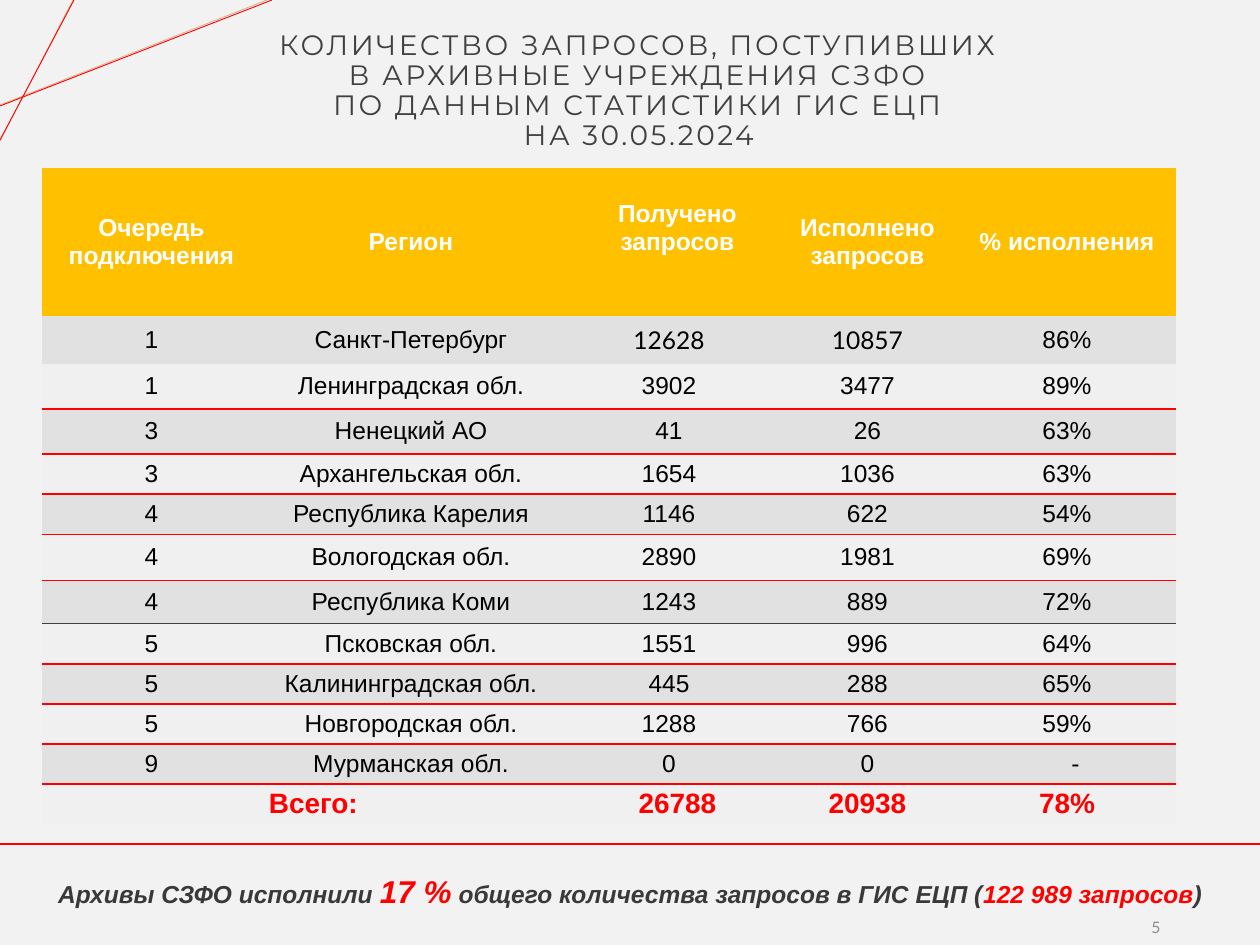
from lxml import etree
from pptx import Presentation
from pptx import util as u
from pptx.dml.color import RGBColor
from pptx.enum import shapes, text
from pptx.oxml.ns import qn

PX = 914400 / 126
RED, GRAY, LIGHT, AMBER = "FF0000", "E1E1E1", "F0F0F0", "FFC000"
CENTER, LEFT, RIGHT = text.PP_ALIGN.CENTER, text.PP_ALIGN.LEFT, text.PP_ALIGN.RIGHT
NO_STYLE = "{2D5ABB26-0587-4C30-8999-92F81FD0307C}"

COL_WIDTHS = [202, 317, 216, 181, 218]
ROW_HEIGHTS = [148, 48, 45, 45, 40, 40, 46, 44, 40, 40, 40, 40, 40]
HEADER = ["Очередь подключения", "Регион", "Получено запросов",
          "Исполнено запросов", "% исполнения"]
REGIONS = [
    ("1", "Санкт-Петербург", "12628", "10857", "86%"),
    ("1", "Ленинградская обл.", "3902", "3477", "89%"),
    ("3", "Ненецкий АО", "41", "26", "63%"),
    ("3", "Архангельская обл.", "1654", "1036", "63%"),
    ("4", "Республика Карелия", "1146", "622", "54%"),
    ("4", "Вологодская обл.", "2890", "1981", "69%"),
    ("4", "Республика Коми", "1243", "889", "72%"),
    ("5", "Псковская обл.", "1551", "996", "64%"),
    ("5", "Калининградская обл.", "445", "288", "65%"),
    ("5", "Новгородская обл.", "1288", "766", "59%"),
    ("9", "Мурманская обл.", "0", "0", "-"),
]
TOTAL = ["", "Всего:", "26788", "20938", "78%"]
# Rules under table rows: row number -> colour, width in points
RULES = {row: (RED, 1) for row in (2, 3, 4, 8, 10, 11)}
RULES.update({5: (RED, 0.5), 7: ("404040", 0.5)})


def px(n):
    return u.Emu(round(n * PX))


def rgb(value):
    return RGBColor.from_string(value)


def set_font(font, size, color, name="Arial", bold=False, italic=False):
    font.size, font.name = u.Pt(size), name
    font.bold, font.italic = bold, italic
    font.color.rgb = rgb(color)


def add_line(s, x1, y1, x2, y2, color, width):
    line = s.shapes.add_connector(shapes.MSO_CONNECTOR.STRAIGHT,
                                  px(x1), px(y1), px(x2), px(y2))
    line.line.color.rgb = rgb(color)
    line.line.width = u.Pt(width)
    etree.SubElement(line._element.spPr, qn("a:effectLst"))


def add_text(s, x, y, w, h, align=CENTER, anchor=text.MSO_ANCHOR.MIDDLE):
    """Add a wrapping text box and return its first paragraph."""
    tf = s.shapes.add_textbox(px(x), px(y), px(w), px(h)).text_frame
    tf.word_wrap = True
    tf.vertical_anchor = anchor
    p = tf.paragraphs[0]
    p.alignment = align
    return p


def set_border(cell, side, color, width):
    tc_pr = cell._tc.get_or_add_tcPr()
    ln = etree.Element(qn(f"a:ln{side}"), w=str(u.Pt(width)))
    fill = etree.SubElement(ln, qn("a:solidFill"))
    etree.SubElement(fill, qn("a:srgbClr"), val=color)
    tc_pr.insert(0, ln)


def fill_cell(cell, value, fill, left, right=8, align=CENTER, **font):
    cell.fill.solid()
    cell.fill.fore_color.rgb = rgb(fill)
    cell.vertical_anchor = text.MSO_ANCHOR.MIDDLE
    cell.margin_left, cell.margin_right = px(left), px(right)
    cell.margin_top = cell.margin_bottom = px(3)
    p = cell.text_frame.paragraphs[0]
    p.alignment = align
    set_font(p.font, **font)
    if value:
        p.add_run().text = value


def add_requests_table(s):
    rows = [HEADER, *REGIONS, TOTAL]
    last = len(rows) - 1
    frame = s.shapes.add_table(len(rows), len(HEADER), px(42), px(168),
                               px(sum(COL_WIDTHS)), px(sum(ROW_HEIGHTS)))
    table = frame.table
    table.first_row = table.horz_banding = False
    table._tbl.tblPr.find(qn("a:tableStyleId")).text = NO_STYLE
    for column, width in zip(table.columns, COL_WIDTHS):
        column.width = px(width)
    for row, height in zip(table.rows, ROW_HEIGHTS):
        row.height = px(height)

    for r, values in enumerate(rows):
        fill = AMBER if r == 0 else GRAY if r % 2 else LIGHT
        for c, value in enumerate(values):
            cell = table.cell(r, c)
            left, right, align = 25 if c < 2 else 8, 8, CENTER
            font = dict(size=14, color="000000")
            if r == 0:
                font.update(color="FFFFFF", bold=True)
            elif r == last:
                font.update(size=16, color=RED, bold=True)
                align = LEFT if c == 1 else CENTER
            elif c == 4:
                left, right = (25, 8) if value == "-" else (13, 13)
            if c == 2 and r in (0, last):
                left = 25
            if r == 1 and c in (2, 3):
                font["name"] = "Lato"
            fill_cell(cell, value, fill, left, right, align, **font)
            # Bottom goes in first: the schema wants top before bottom
            for side, rule in (("B", RULES.get(r)), ("T", RULES.get(r - 1))):
                if rule:
                    set_border(cell, side, *rule)
    # The received-requests heading sits one half line higher
    table.cell(0, 2).margin_bottom = px(31)


def add_title(s):
    p = add_text(s, 39, 0, 1200, 183)
    p.line_spacing = 0.9
    set_font(p.font, 16, "404040", "Montserrat")
    p.text = ("КОЛИЧЕСТВО ЗАПРОСОВ, ПОСТУПИВШИХ\vВ АРХИВНЫЕ УЧРЕЖДЕНИЯ СЗФО\v"
              "ПО ДАННЫМ СТАТИСТИКИ ГИС ЕЦП\vНА 30.05.2024")
    for r in p.runs:
        r._r.get_or_add_rPr().set("spc", "150")


def add_summary(s):
    p = add_text(s, 39, 866, 1182, 79, anchor=text.MSO_ANCHOR.TOP)
    for value, size, color in (
            ("Архивы СЗФО исполнили ", 14, "3B3838"),
            ("17 %", 18, RED),
            (" общего количества запросов в ГИС ЕЦП (", 14, "3B3838"),
            ("122 989 запросов", 14, RED),
            (")", 14, "3B3838")):
        r = p.add_run()
        r.text = value
        set_font(r.font, size, color, bold=True, italic=True)


def main():
    prs = Presentation()
    prs.slide_width, prs.slide_height = px(1260), px(945)
    s = prs.slides.add_slide(prs.slide_layouts[6])
    s.background.fill.solid()
    s.background.fill.fore_color.rgb = rgb("F2F2F2")

    # Corner lines, pale ones beneath
    add_line(s, 0, 105, 267, 0, "E2B18D", 0.5)
    add_line(s, 73, 0, 0, 141, "E2B18D", 0.5)

    add_title(s)
    add_requests_table(s)

    # Red corner lines
    add_line(s, 0, 140, 74, 0, RED, 0.5)
    add_line(s, 0, 106, 272, 0, RED, 0.5)

    # Footer
    add_summary(s)
    add_line(s, 0, 844, 1260, 844, RED, 1.25)
    p = add_text(s, 907, 910, 266, 34, RIGHT)
    set_font(p.font, 9, "8C8C8C", "Lato")
    p.add_run().text = "5"

    prs.save("out.pptx")


if __name__ == "__main__":
    main()
